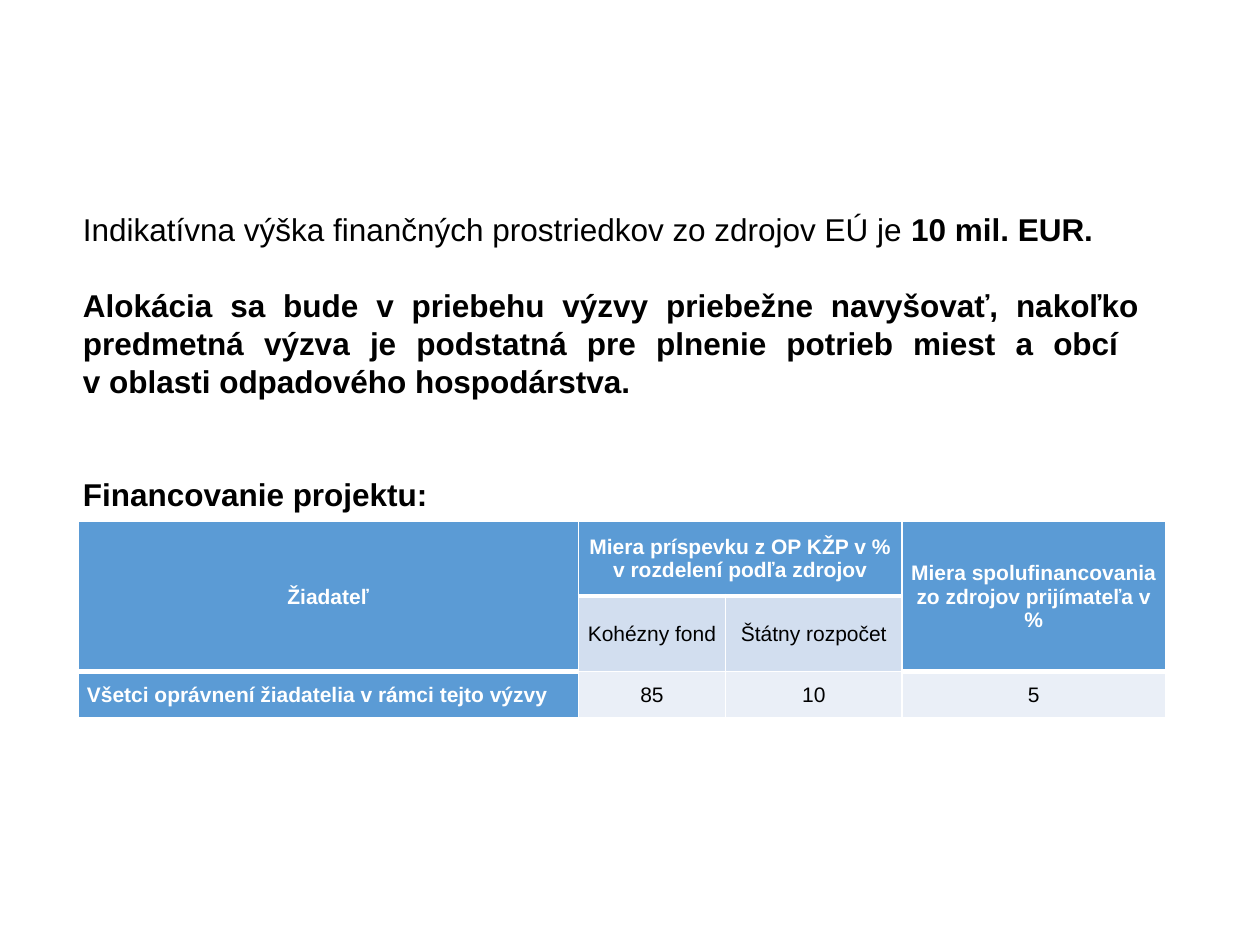
from lxml import etree
from pptx import Presentation
from pptx.dml.color import RGBColor
from pptx.enum.text import MSO_ANCHOR, PP_ALIGN
from pptx.oxml.ns import qn
from pptx.util import Inches, Pt

LEFT, CENTER, JUSTIFY = PP_ALIGN.LEFT, PP_ALIGN.CENTER, PP_ALIGN.JUSTIFY
MIDDLE = MSO_ANCHOR.MIDDLE
BLACK = RGBColor(0x00, 0x00, 0x00)
WHITE = RGBColor(0xFF, 0xFF, 0xFF)
BLUE = RGBColor(0x5B, 0x9B, 0xD5)
LIGHT_BLUE = RGBColor(0xD2, 0xDE, 0xEF)
PALE_BLUE = RGBColor(0xEA, 0xEF, 0xF7)
FONT = "Arial"
LINE = 21.6  # line pitch of the body text, in points

# Blank lines above, alignment, runs of (text, bold)
BODY = [
    (0, LEFT, [("Indikatívna výška finančných prostriedkov zo zdrojov EÚ je ", False),
               ("10 mil. EUR.", True)]),
    (1, JUSTIFY, [("Alokácia sa bude v priebehu výzvy priebežne navyšovať, nakoľko "
                   "predmetná výzva je podstatná pre plnenie potrieb miest a obcí \n"
                   "v oblasti odpadového hospodárstva.", True)]),
    (2, JUSTIFY, [("Financovanie projektu:", True)]),
]
COLUMNS = [3.97, 1.17, 1.4, 2.09]
ROWS = [0.59, 0.59, 0.37]
MERGES = [((0, 0), (1, 0)), ((0, 1), (0, 2)), ((0, 3), (1, 3))]
CELLS = [
    ["Žiadateľ", "Miera príspevku z OP KŽP v %\nv rozdelení podľa zdrojov", "",
     "Miera spolufinancovania zo zdrojov prijímateľa v %"],
    ["", "Kohézny fond", "Štátny rozpočet", ""],
    ["Všetci oprávnení žiadatelia v rámci tejto výzvy", "85", "10", "5"],
]


def add_text(para, text, size, color, bold):
    for index, line in enumerate(text.split("\n")):
        if index:
            para.add_line_break()
        span = para.add_run()
        span.text = line
        span.font.name, span.font.size = FONT, Pt(size)
        span.font.bold, span.font.color.rgb = bold, color


def add_body(page, left, top, width, height):
    box = page.shapes.add_textbox(Inches(left), Inches(top), Inches(width), Inches(height))
    frame = box.text_frame
    frame.word_wrap = True
    for index, (gap, alignment, spans) in enumerate(BODY):
        para = frame.add_paragraph() if index else frame.paragraphs[0]
        para.alignment = alignment
        para.line_spacing = Pt(LINE)
        if gap:
            para.space_before = Pt(gap * LINE)
        for text, bold in spans:
            add_text(para, text, 18, BLACK, bold)


def set_borders(cell, bottom):
    properties = cell._tc.get_or_add_tcPr()
    for index, (side, width) in enumerate((("a:lnL", 1), ("a:lnR", 1), ("a:lnB", bottom))):
        line = etree.Element(qn(side), w=str(Pt(width)))
        fill = etree.SubElement(line, qn("a:solidFill"))
        etree.SubElement(fill, qn("a:srgbClr"), val=str(WHITE))
        properties.insert(index, line)


def format_cell(cell, row, column, text):
    joined_header = row == 1 and column in (0, 3)
    header = row == 0 or joined_header
    strong = header or column == 0
    cell.fill.solid()
    cell.fill.fore_color.rgb = BLUE if strong else LIGHT_BLUE if row == 1 else PALE_BLUE
    set_borders(cell, 3 if header else 1)
    cell.vertical_anchor = MIDDLE
    cell.margin_left = cell.margin_right = Inches(0.07)
    cell.margin_top = cell.margin_bottom = 0
    if text:
        para = cell.text_frame.paragraphs[0]
        para.alignment = LEFT if (row, column) == (2, 0) else CENTER
        add_text(para, text, 12, WHITE if strong else BLACK, strong)


def add_financing_table(page, left, top):
    table = page.shapes.add_table(
        len(ROWS), len(COLUMNS), Inches(left), Inches(top),
        Inches(sum(COLUMNS)), Inches(sum(ROWS))).table
    for column, width in zip(table.columns, COLUMNS):
        column.width = Inches(width)
    for row, height in zip(table.rows, ROWS):
        row.height = Inches(height)
    for first, last in MERGES:
        table.cell(*first).merge(table.cell(*last))
    for row, texts in enumerate(CELLS):
        for column, text in enumerate(texts):
            format_cell(table.cell(row, column), row, column, text)


def main():
    deck = Presentation()
    deck.slide_width, deck.slide_height = Inches(10), Inches(7.5)
    page = deck.slides.add_slide(deck.slide_layouts[6])
    add_body(page, 0.56, 1.62, 8.58, 2.52)
    add_financing_table(page, 0.62, 4.14)
    deck.save("out.pptx")


if __name__ == "__main__":
    main()
